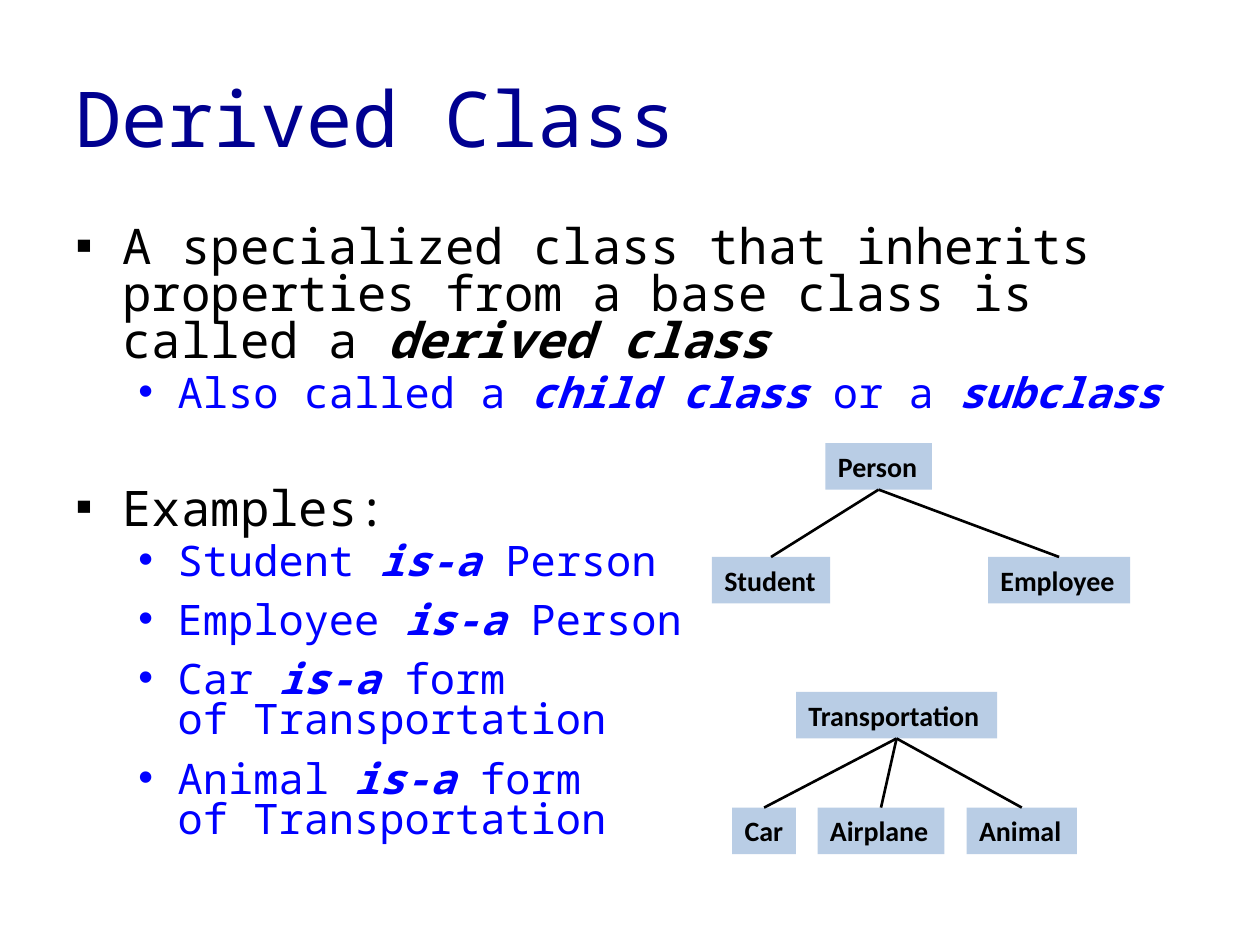
from lxml import etree
from pptx import Presentation
from pptx.dml.color import RGBColor
from pptx.enum.shapes import MSO_CONNECTOR, MSO_SHAPE
from pptx.enum.text import MSO_ANCHOR, MSO_AUTO_SIZE, PP_ALIGN
from pptx.oxml.ns import qn
from pptx.util import Pt

RECTANGLE = MSO_SHAPE.RECTANGLE
STRAIGHT = MSO_CONNECTOR.STRAIGHT
TOP, MIDDLE = MSO_ANCHOR.TOP, MSO_ANCHOR.MIDDLE
LEFT = PP_ALIGN.LEFT
NO_FIT = MSO_AUTO_SIZE.NONE

BLACK = RGBColor(0x00, 0x00, 0x00)
NAVY = RGBColor(0x00, 0x00, 0x90)
BLUE = RGBColor(0x00, 0x00, 0xFF)
PALE_BLUE = RGBColor(0xB9, 0xCD, 0xE5)

MONO, SANS = "Noto Sans Mono", "Calibri"
TOP_SITE, BOTTOM_SITE = 0, 2  # connection sites of a rectangle

POINT = {
    "font": {"size": Pt(28), "name": MONO, "color": BLACK},
    "format": {"line_spacing": 0.8, "space_before": Pt(12.2)},
    "bullet": ("▪", 27, -27),
}
SUBPOINT = {
    "font": {"size": Pt(24), "name": MONO, "color": BLUE},
    "format": {"level": 1, "line_spacing": 0.8,
               "space_before": Pt(4.8), "space_after": Pt(6)},
    "bullet": ("•", 58.5, -22.5),
}
# The second topic starts after a wider gap
NEW_TOPIC = {**POINT, "format": {**POINT["format"], "space_before": Pt(35)}}
TITLE = {"font": {"size": Pt(44), "name": MONO, "color": NAVY}}
LABEL = {"font": {"size": Pt(16), "name": SANS, "color": BLACK, "bold": True}}

# Text between asterisks is bold italic
BODY = [
    (POINT, "A specialized class that inherits properties from a base class "
            "is called a *derived class*"),
    (SUBPOINT, "Also called a *child class* or a *subclass*"),
    (NEW_TOPIC, "Examples:"),
    (SUBPOINT, "Student *is-a* Person"),
    (SUBPOINT, "Employee *is-a* Person"),
    (SUBPOINT, "Car *is-a* form\nof Transportation"),
    (SUBPOINT, "Animal *is-a* form\nof Transportation"),
]

# Each node: label, left, top, width
TREES = [
    (("Person", 471.7, 253.2, 60.8),
     [("Student", 406.8, 318.3, 67.6), ("Employee", 564.6, 318.3, 81.2)]),
    (("Transportation", 454.9, 395.4, 114.9),
     [("Car", 418.4, 461.5, 36.5), ("Airplane", 467.2, 461.5, 72.5),
      ("Animal", 552.4, 461.5, 63)]),
]
NODE_HEIGHT = 26.6


class SlideBuilder:
    def __init__(self, deck):
        self.page = deck.slides.add_slide(deck.slide_layouts[6])

    def paragraph(self, para, text, style):
        for name, value in {"alignment": LEFT, **style.get("format", {})}.items():
            setattr(para, name, value)
        if "bullet" in style:
            self.bullet(para, *style["bullet"])
        for index, part in enumerate(text.split("*")):
            for number, line in enumerate(part.split("\n")):
                if number:
                    para.add_line_break()
                if line:
                    self.span(para, line, style["font"], index % 2 == 1)

    def span(self, para, text, font, emphasis):
        span = para.add_run()
        span.text = text
        values = {**font, "bold": emphasis or font.get("bold", False),
                  "italic": emphasis}
        span.font.color.rgb = values.pop("color")
        for name, value in values.items():
            setattr(span.font, name, value)

    def bullet(self, para, symbol, margin, indent):
        properties = para._p.get_or_add_pPr()
        properties.set("marL", str(Pt(margin)))
        properties.set("indent", str(Pt(indent)))
        etree.SubElement(properties, qn("a:buFont"), typeface="Arial")
        etree.SubElement(properties, qn("a:buChar"), char=symbol)

    def text(self, left, top, width, height, content, anchor=TOP):
        box = self.page.shapes.add_textbox(Pt(left), Pt(top), Pt(width), Pt(height))
        frame = box.text_frame
        for name, value in {"word_wrap": True, "auto_size": NO_FIT,
                            "vertical_anchor": anchor}.items():
            setattr(frame, name, value)
        for index, (style, text) in enumerate(content):
            para = frame.add_paragraph() if index else frame.paragraphs[0]
            self.paragraph(para, text, style)

    def node(self, group, label, left, top, width):
        box = group.shapes.add_shape(RECTANGLE, Pt(left), Pt(top),
                                     Pt(width), Pt(NODE_HEIGHT))
        box.shadow.inherit = False
        box.fill.solid()
        box.fill.fore_color.rgb = PALE_BLUE
        box.line.fill.background()
        box.text_frame.word_wrap = False
        box.text_frame.vertical_anchor = TOP
        self.paragraph(box.text_frame.paragraphs[0], label, LABEL)
        return box

    def branch(self, group, parent, child):
        line = group.shapes.add_connector(STRAIGHT, 0, 0, 0, 0)
        line.begin_connect(parent, BOTTOM_SITE)
        line.end_connect(child, TOP_SITE)
        line.line.color.rgb = BLACK
        line.line.width = Pt(1.5)
        etree.SubElement(line._element.spPr, qn("a:effectLst"))

    def tree(self, root, leaves):
        group = self.page.shapes.add_group_shape()
        parent = self.node(group, *root)
        children = [self.node(group, *leaf) for leaf in leaves]
        for child in children:
            self.branch(group, parent, child)


def main():
    deck = Presentation()
    deck.slide_width, deck.slide_height = Pt(720), Pt(540)
    builder = SlideBuilder(deck)

    # Title and bullet list
    builder.text(36, 21.6, 648, 90, [(TITLE, "Derived Class")], MIDDLE)
    builder.text(36, 126, 648, 356.4, BODY)

    # Class hierarchies
    for root, leaves in TREES:
        builder.tree(root, leaves)

    deck.save("out.pptx")


if __name__ == "__main__":
    main()
